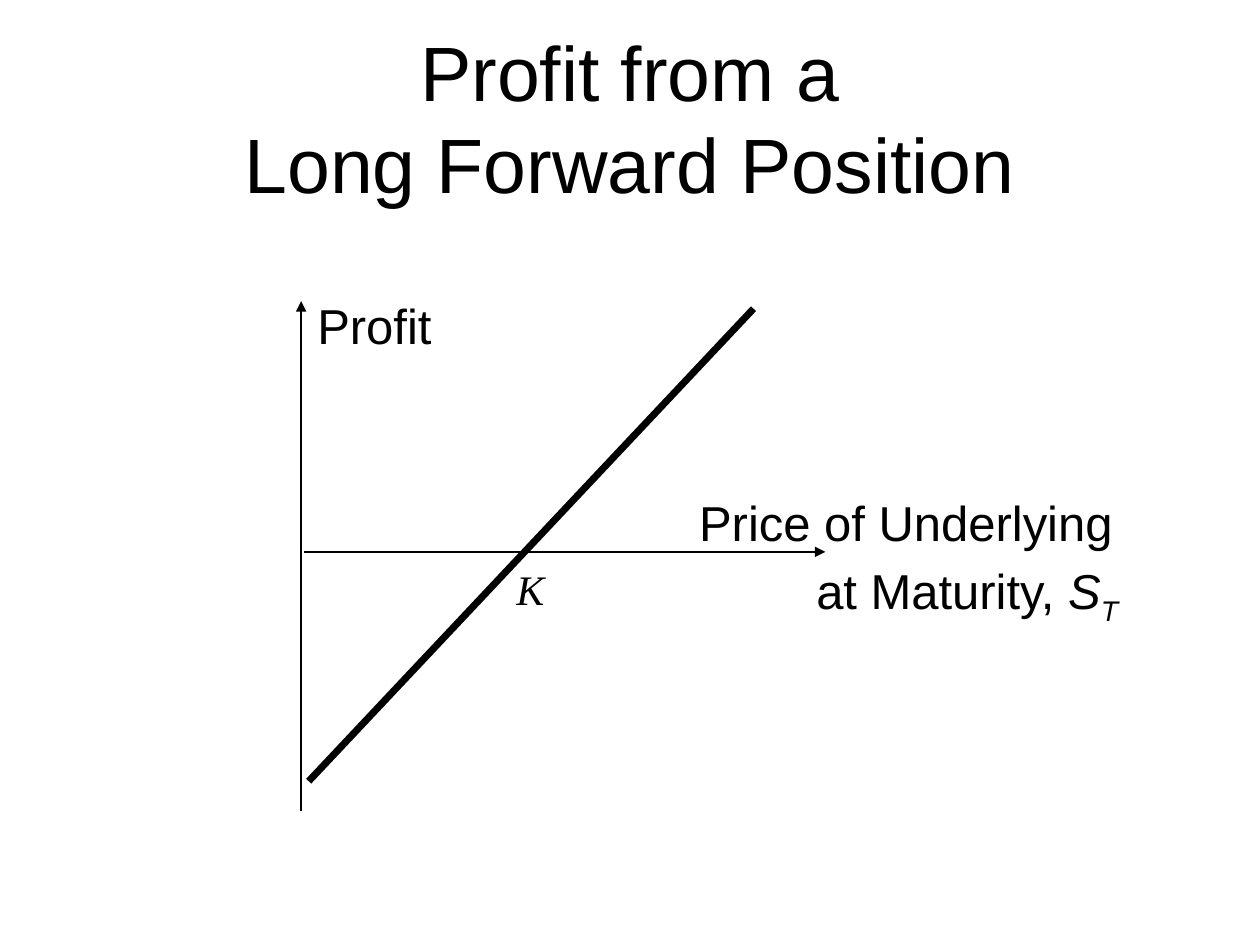
"""Build a slide with the profit line of a long forward position."""
from dataclasses import dataclass

from lxml.etree import SubElement
from pptx import Presentation
from pptx.dml.color import RGBColor
from pptx.enum.shapes import MSO_CONNECTOR
from pptx.enum.text import MSO_ANCHOR, MSO_AUTO_SIZE, PP_ALIGN
from pptx.oxml.ns import qn
from pptx.util import Inches, Pt


@dataclass(frozen=True)
class Theme:
    ink: RGBColor = RGBColor(0, 0, 0)
    sans: str = "Arial"
    serif: str = "Times New Roman"
    title: int = 44
    label: int = 28
    strike: int = 24
    axis_width: int = 1
    profit_width: int = 4


THEME = Theme()
SLIDE_SIZE = (10, 7.5)
TITLE = "Profit from a\vLong Forward Position"
TITLE_BOX = (0.5, 0.3, 9, 1.25)

LINES = [
    ((2.39, 6.44), (2.39, 2.39), THEME.axis_width, True),
    ((2.41, 4.38), (6.55, 4.38), THEME.axis_width, True),
    ((2.45, 6.2), (5.98, 2.45), THEME.profit_width, False),
]

PLAIN, ITALIC, SUBSCRIPT = "plain", "italic", "subscript"
LABELS = [
    {"box": (2.42, 2.3, 1.11, 0.56), "font": THEME.sans, "size": THEME.label,
     "rows": [(0, [("Profit", PLAIN)])]},
    {"box": (5.02, 3.86, 4.01, 1.1), "font": THEME.sans, "size": THEME.label,
     "rows": [(0.43, [("Price of Underlying", PLAIN)]),
              (1.36, [("at Maturity, ", PLAIN), ("S", ITALIC), ("T", SUBSCRIPT)])]},
    {"box": (4, 4.42, 0.66, 0.5), "font": THEME.serif, "size": THEME.strike,
     "rows": [(0, [("K", ITALIC)])]},
]
ROW_GAP = 5


def style_run(run, font_name, size, style=PLAIN):
    font = run.font
    font.name, font.size, font.color.rgb = font_name, Pt(size), THEME.ink
    font.italic = style != PLAIN
    if style == SUBSCRIPT:
        run._r.get_or_add_rPr().set("baseline", "-25000")


def set_title(slide):
    title = slide.shapes.title
    title.left, title.top, title.width, title.height = map(Inches, TITLE_BOX)
    frame = title.text_frame
    frame.text = TITLE
    frame.auto_size = MSO_AUTO_SIZE.NONE
    frame.vertical_anchor = MSO_ANCHOR.MIDDLE
    paragraph = frame.paragraphs[0]
    paragraph.alignment = PP_ALIGN.CENTER
    for run in paragraph.runs:
        style_run(run, THEME.sans, THEME.title)


def add_line(slide, start, end, width, has_arrow):
    connector = slide.shapes.add_connector(
        MSO_CONNECTOR.STRAIGHT, *map(Inches, start + end))
    connector.line.color.rgb = THEME.ink
    connector.line.width = Pt(width)
    if has_arrow:
        SubElement(connector.line._get_or_add_ln(), qn("a:tailEnd"), type="triangle")
    SubElement(connector._element.spPr, qn("a:effectLst"))


def add_label(slide, box, font, size, rows):
    frame = slide.shapes.add_textbox(*map(Inches, box)).text_frame
    frame.word_wrap = len(rows) > 1
    for index, (indent, pieces) in enumerate(rows):
        paragraph = frame.add_paragraph() if index else frame.paragraphs[0]
        paragraph.space_before = Pt(ROW_GAP * index)
        paragraph._p.get_or_add_pPr().set("marL", str(Inches(indent)))
        for text, style in pieces:
            run = paragraph.add_run()
            run.text = text
            style_run(run, font, size, style)


def main():
    presentation = Presentation()
    presentation.slide_width, presentation.slide_height = map(Inches, SLIDE_SIZE)
    slide = presentation.slides.add_slide(presentation.slide_layouts.get_by_name("Title Only"))
    set_title(slide)
    for line in LINES:
        add_line(slide, *line)
    for label in LABELS:
        add_label(slide, **label)
    presentation.save("out.pptx")


if __name__ == "__main__":
    main()
